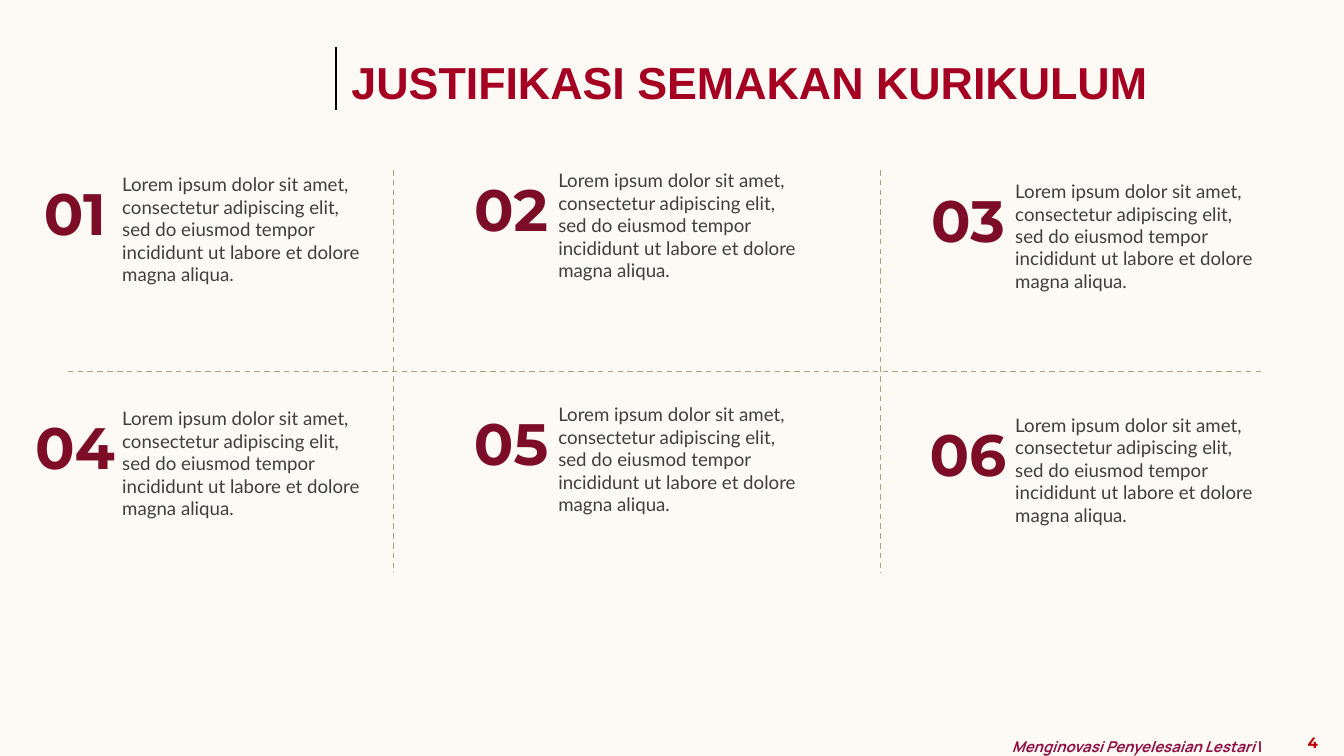
"""Build the curriculum review slide with six numbered reasons."""
import lxml.etree
import pptx
import pptx.dml.color
import pptx.enum.dml
import pptx.enum.shapes
import pptx.enum.text
import pptx.oxml.ns
import pptx.util


class Theme:
    back, title, num, body = "FDFAF5", "A50021", "7D0C26", "3F3F3F"
    foot, page, bar, rule = "901042", "C00000", "000000", "B19C7D"
    big, head, text, small = 62.5, 48, 20, 16


PX = 9144
LEFT = pptx.enum.text.PP_ALIGN.LEFT
MID = pptx.enum.text.PP_ALIGN.CENTER
LOREM = (
    "Lorem ipsum dolor sit amet, consectetur adipiscing elit, sed do eiusmod "
    "tempor incididunt ut labore et dolore magna aliqua."
)


def write(shape, box, runs, font, size, color, bold=True, align=LEFT,
          space=None, pad=(0, 0)):
    shape.left, shape.top, shape.width, shape.height = [n * PX for n in box]
    frame = shape.text_frame
    frame.word_wrap = True
    frame.vertical_anchor = pptx.enum.text.MSO_ANCHOR.TOP
    frame.margin_left = frame.margin_right = pad[0] * PX
    frame.margin_top = frame.margin_bottom = pad[1] * PX
    para = frame.paragraphs[0]
    para.alignment = align
    if space:
        para.line_spacing = space
    for text, slant in runs:
        run = para.add_run()
        run.text = text
        run.font.name, run.font.size = font, pptx.util.Pt(size)
        run.font.bold, run.font.italic = bold, slant
        run.font.color.rgb = pptx.dml.color.RGBColor.from_string(color)


def draw(ends, color, width, dash=None):
    line = slide.shapes.add_connector(
        pptx.enum.shapes.MSO_CONNECTOR.STRAIGHT, *[n * PX for n in ends])
    line.line.color.rgb = pptx.dml.color.RGBColor.from_string(color)
    line.line.width = pptx.util.Pt(width)
    line.line.dash_style = dash
    props = line._element.spPr
    lxml.etree.SubElement(props, pptx.oxml.ns.qn("a:effectLst"))


deck = pptx.Presentation()
deck.slide_width, deck.slide_height = 2000 * PX, 1125 * PX
slide = deck.slides.add_slide(deck.slide_layouts[5])
fill = slide.background.fill
fill.solid()
fill.fore_color.rgb = pptx.dml.color.RGBColor.from_string(Theme.back)

title = slide.shapes.title
write(title, (513, 69, 1278, 125), [("JUSTIFIKASI SEMAKAN KURIKULUM", False)],
      "Arial", Theme.head, Theme.title, pad=(10, 12))
title.text_frame.auto_size = pptx.enum.text.MSO_AUTO_SIZE.NONE
draw((500, 70, 500, 164), Theme.bar, 3)

dash = pptx.enum.dml.MSO_LINE.DASH
for ends in ((586, 253, 586, 853), (1310, 253, 1310, 853),
             (101, 553, 1881, 553)):
    draw(ends, Theme.rule, 1.5, dash)

cols = ((11, 224), (660, 218), (1340, 234))
for row in range(2):
    for col, (x, top) in enumerate(cols):
        y = top + 348 * row
        label = f"{row * len(cols) + col + 1:02d}"
        num = slide.shapes.add_textbox(0, 0, 0, 0)
        write(num, (x, y, 201, 145), [(label, False)], "Montserrat",
              Theme.big, Theme.num, align=MID, space=1.38)
        body = slide.shapes.add_textbox(0, 0, 0, 0)
        write(body, (x + 161, y + 29, 380, 219), [(LOREM, False)], "Lato",
              Theme.text, Theme.body, bold=False, pad=(10, 5))

foot = slide.shapes.add_textbox(0, 0, 0, 0)
write(foot, (1506, 1087, 420, 38),
      [("Menginovasi Penyelesaian Lestari ", True), ("|", False)],
      "Manrope", Theme.small, Theme.foot, space=1.4)
page = slide.shapes.add_textbox(0, 0, 0, 0)
write(page, (1907, 1087, 93, 37), [("4", False)], "Montserrat",
      Theme.small, Theme.page, align=MID, pad=(10, 5))

deck.save("out.pptx")
